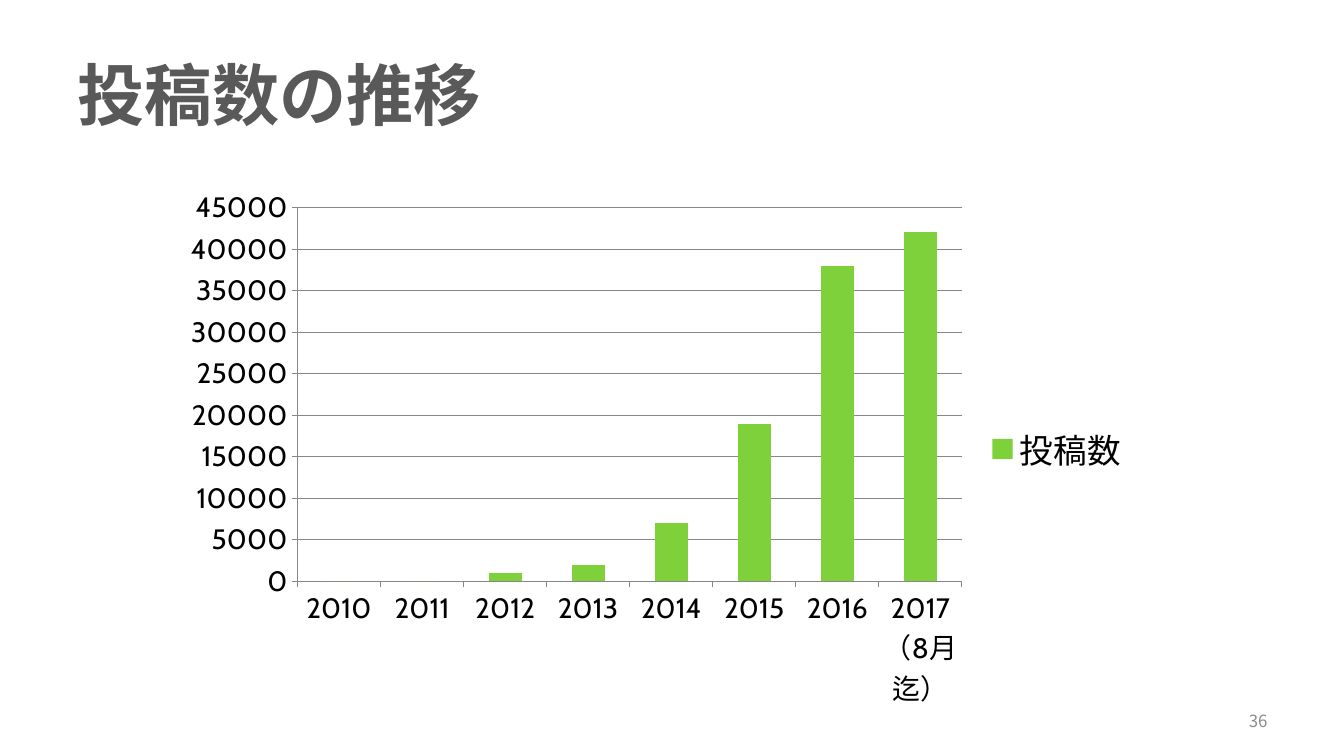
from typing import NamedTuple

from lxml import etree
from pptx import Presentation
from pptx.chart.data import CategoryChartData
from pptx.dml.color import RGBColor
from pptx.enum.chart import XL_CHART_TYPE, XL_LEGEND_POSITION, XL_TICK_MARK
from pptx.enum.text import MSO_ANCHOR, PP_ALIGN
from pptx.oxml.ns import qn
from pptx.util import Inches, Pt

COLUMNS = XL_CHART_TYPE.COLUMN_CLUSTERED
LEGEND_RIGHT = XL_LEGEND_POSITION.RIGHT
TICK_OUTSIDE = XL_TICK_MARK.OUTSIDE
MIDDLE = MSO_ANCHOR.MIDDLE
LEFT, RIGHT = PP_ALIGN.LEFT, PP_ALIGN.RIGHT
LATIN_FONT = "Cabin"
JAPANESE_FONT = "Noto Sans CJK JP"
AXIS_GRAY = "878787"
TITLE_ONLY = 5


class Posts(NamedTuple):
    period: str
    count: int


class Label(NamedTuple):
    text: str
    box: tuple[float, float, float, float]
    size: int
    font: str
    color: str
    bold: bool
    align: int


POSTS = [
    Posts("2010", 0),
    Posts("2011", 0),
    Posts("2012", 1000),
    Posts("2013", 2000),
    Posts("2014", 7000),
    Posts("2015", 19000),
    Posts("2016", 38000),
    Posts("2017（8月迄）", 42000),
]
TITLE = Label("投稿数の推移", (0.67, 0.3, 12, 1.25), 48, LATIN_FONT, "595959", True, LEFT)
PAGE_NUMBER = Label("36", (9.56, 6.95, 3.11, 0.4), 12, JAPANESE_FONT, "8C8C8C", False, RIGHT)
CHART_BOX = (1.7, 1.78, 9.61, 5.35)


def rgb(color: str) -> RGBColor:
    return RGBColor.from_string(color)


def set_font(font, size: int, name: str, color: str, bold: bool = False) -> None:
    font.size = Pt(size)
    font.name = name
    font.bold = bold
    font.color.rgb = rgb(color)
    latin = font._rPr.find(qn("a:latin"))
    east_asian = etree.Element(qn("a:ea"), typeface=JAPANESE_FONT)
    latin.addnext(east_asian)


def write_label(shape, label: Label) -> None:
    shape.left, shape.top, shape.width, shape.height = map(Inches, label.box)
    frame = shape.text_frame
    frame.word_wrap = True
    frame.vertical_anchor = MIDDLE
    paragraph = frame.paragraphs[0]
    paragraph.alignment = label.align
    run = paragraph.add_run()
    run.text = label.text
    set_font(run.font, label.size, label.font, label.color, label.bold)


def style_line(line) -> None:
    line.color.rgb = rgb(AXIS_GRAY)
    line.width = Pt(0.75)


def add_posts_chart(slide) -> None:
    data = CategoryChartData()
    data.categories = [posts.period for posts in POSTS]
    data.add_series("投稿数", [posts.count for posts in POSTS])
    chart = slide.shapes.add_chart(COLUMNS, *map(Inches, CHART_BOX), data).chart
    chart.has_title = False
    set_font(chart.font, 10, LATIN_FONT, "000000")

    plot = chart.plots[0]
    plot.gap_width = 150
    plot.vary_by_categories = False
    fill = plot.series[0].format.fill
    fill.solid()
    fill.fore_color.rgb = rgb("7FD13B")

    for axis in (chart.category_axis, chart.value_axis):
        axis.major_tick_mark = TICK_OUTSIDE
        set_font(axis.tick_labels.font, 20, LATIN_FONT, "000000")
        style_line(axis.format.line)
    chart.value_axis.minimum_scale = 0
    chart.value_axis.maximum_scale = 45000
    chart.value_axis.major_unit = 5000
    style_line(chart.value_axis.major_gridlines.format.line)

    chart.has_legend = True
    chart.legend.position = LEGEND_RIGHT
    chart.legend.include_in_layout = False
    set_font(chart.legend.font, 24, LATIN_FONT, "000000")


def main() -> None:
    presentation = Presentation()
    presentation.slide_width = Inches(13.33)
    presentation.slide_height = Inches(7.5)
    slide = presentation.slides.add_slide(presentation.slide_layouts[TITLE_ONLY])
    write_label(slide.shapes.title, TITLE)
    page_box = slide.shapes.add_textbox(*map(Inches, PAGE_NUMBER.box))
    write_label(page_box, PAGE_NUMBER)
    add_posts_chart(slide)
    presentation.save("out.pptx")


if __name__ == "__main__":
    main()
